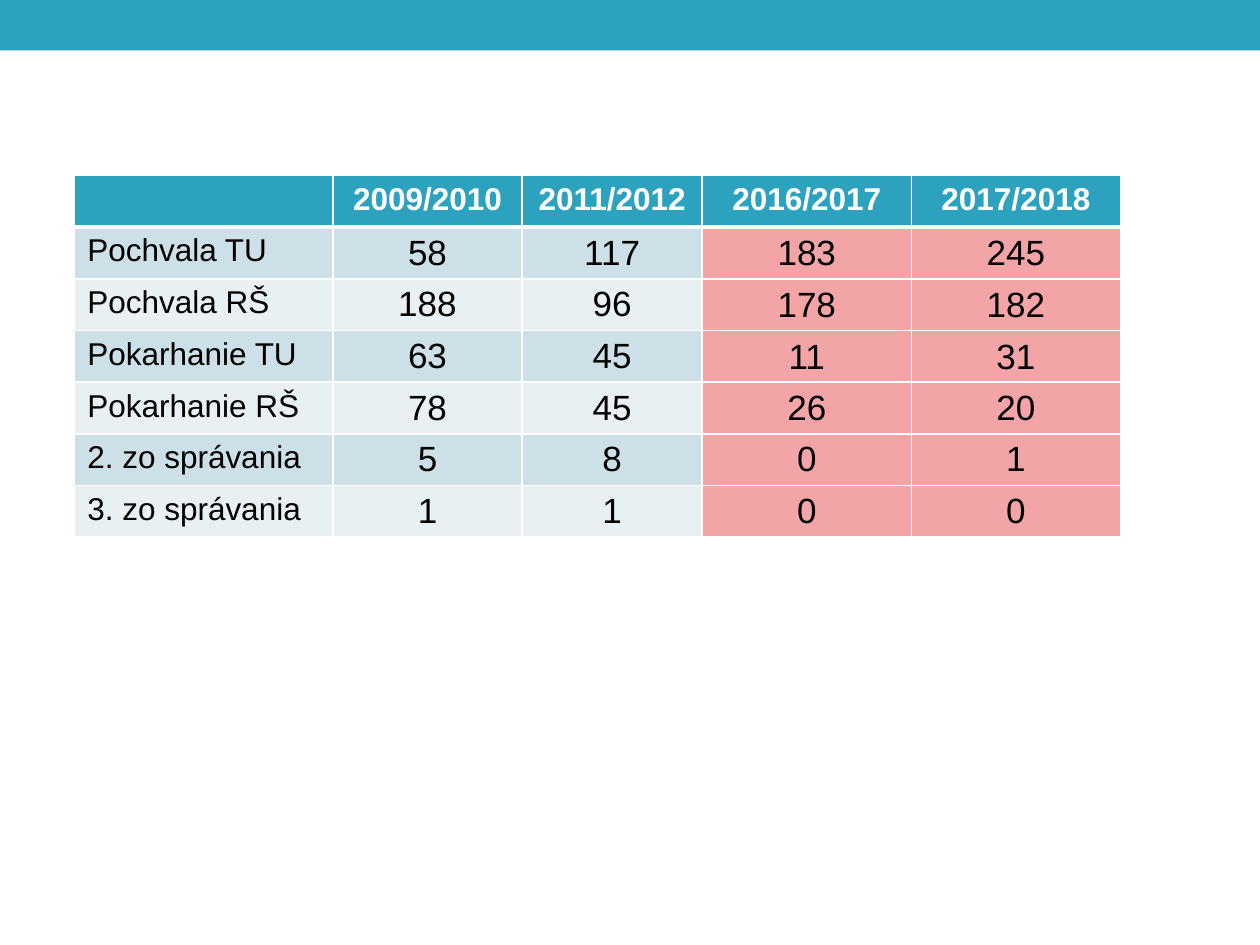
from lxml import etree
from pptx import Presentation
from pptx.dml.color import RGBColor
from pptx.enum.shapes import MSO_SHAPE
from pptx.enum.text import MSO_ANCHOR, PP_ALIGN
from pptx.oxml.ns import qn
from pptx.util import Pt

RECT = MSO_SHAPE.RECTANGLE
TOP, MIDDLE = MSO_ANCHOR.TOP, MSO_ANCHOR.MIDDLE
LEFT, CENTER = PP_ALIGN.LEFT, PP_ALIGN.CENTER

TEAL = RGBColor(0x2D, 0xA2, 0xBF)
BANDS = (RGBColor(0xCD, 0xE0, 0xE8), RGBColor(0xE8, 0xF0, 0xF4))
PINK = RGBColor(0xF2, 0xA4, 0xA7)
WHITE = RGBColor(0xFF, 0xFF, 0xFF)
BLACK = RGBColor(0, 0, 0)

WIDTHS = (147.6, 108, 103, 119.5, 119.5)
ROW_H = 29.5
ROWS = (
    ("", "2009/2010", "2011/2012", "2016/2017", "2017/2018"),
    ("Pochvala TU", "58", "117", "183", "245"),
    ("Pochvala RŠ", "188", "96", "178", "182"),
    ("Pokarhanie TU", "63", "45", "11", "31"),
    ("Pokarhanie RŠ", "78", "45", "26", "20"),
    ("2. zo správania", "5", "8", "0", "1"),
    ("3. zo správania", "1", "1", "0", "0"),
)
RECENT = 3  # first column of the recent years
TIGHT = {"margin_left": Pt(0.7), "margin_right": Pt(0.7),
         "margin_top": Pt(0.7), "margin_bottom": Pt(0)}

# Font, alignment and anchor of each kind of cell
HEAD = ({"name": "Arial", "size": Pt(18), "bold": True}, WHITE, CENTER, TOP)
LABEL = ({"name": "Arial", "size": Pt(18), "bold": False}, BLACK, LEFT, TOP)
VALUE = ({"name": "Arial", "size": Pt(20), "bold": False}, BLACK, CENTER, MIDDLE)


def set_all(item, values):
    for name, value in values.items():
        setattr(item, name, value)


def add_bar(slide, width):
    bar = slide.shapes.add_shape(RECT, 0, 0, width, Pt(28.8))
    bar.shadow.inherit = False
    bar.fill.solid()
    bar.fill.fore_color.rgb = TEAL
    bar.line.fill.background()


def add_edges(cell, row):
    """Draw white borders, with a thick rule below the header."""
    props = cell._tc.get_or_add_tcPr()
    sizes = {"L": 1, "R": 1, "T": 3 if row == 1 else 1, "B": 3 if row == 0 else 1}
    for side, size in sizes.items():
        line = etree.SubElement(props, qn(f"a:ln{side}"), w=str(Pt(size)))
        fill = etree.SubElement(line, qn("a:solidFill"))
        etree.SubElement(fill, qn("a:srgbClr"), val=str(WHITE))


def pick_fill(row, col):
    if row == 0:
        return TEAL
    return PINK if col >= RECENT else BANDS[(row - 1) % 2]


def fill_cell(cell, text, row, col):
    style = HEAD if row == 0 else LABEL if col == 0 else VALUE
    font, color, align, anchor = style
    add_edges(cell, row)
    cell.fill.solid()
    cell.fill.fore_color.rgb = pick_fill(row, col)
    cell.vertical_anchor = anchor
    if col >= RECENT and 1 <= row <= 4:
        set_all(cell, TIGHT)
    para = cell.text_frame.paragraphs[0]
    para.alignment = align
    if text:
        run = para.add_run()
        run.text = text
        set_all(run.font, font)
        run.font.color.rgb = color


def add_grid(slide):
    frame = slide.shapes.add_table(
        len(ROWS), len(WIDTHS), Pt(42.7), Pt(100.3),
        Pt(sum(WIDTHS)), Pt(ROW_H * len(ROWS)))
    table = frame.table
    for col, width in zip(table.columns, WIDTHS):
        col.width = Pt(width)
    for row, texts in enumerate(ROWS):
        table.rows[row].height = Pt(ROW_H)
        for col, text in enumerate(texts):
            fill_cell(table.cell(row, col), text, row, col)


def main():
    deck = Presentation()
    deck.slide_width, deck.slide_height = Pt(720), Pt(540)
    slide = deck.slides.add_slide(deck.slide_layouts[6])
    # Band across the top
    add_bar(slide, deck.slide_width)
    # Table of praise and reprimands by school year
    add_grid(slide)
    deck.save("out.pptx")


if __name__ == "__main__":
    main()
